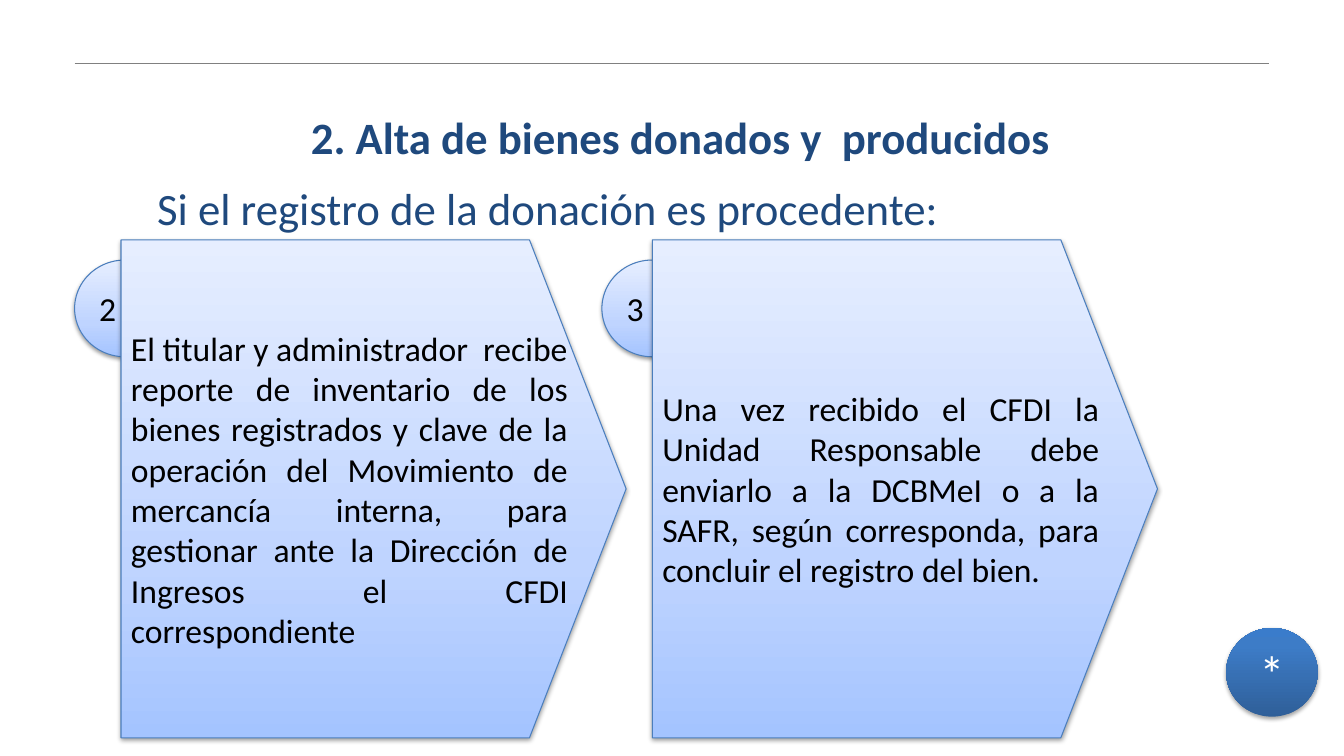
"""Builds the slide on registering donated and produced goods."""
from dataclasses import dataclass

from lxml import etree
from pptx import Presentation
from pptx.dml.color import RGBColor
from pptx.enum import shapes, text
from pptx.oxml import ns
from pptx.util import Inches, Pt

Stops = tuple[tuple[int, str], ...]
Box = tuple[float, float, float, float]


@dataclass(frozen=True)
class Theme:
    """Colours, font and type sizes of the slide."""
    font: str = "Calibri"
    heading: str = "1F497D"
    body: str = "000000"
    light: str = "FFFFFF"
    rule: str = "808080"
    outline: str = "4B7EBC"
    pale: Stops = ((0, "A4C4FF"), (35, "BFD4FF"), (100, "E6EEFF"))
    deep: Stops = ((0, "2F5F99"), (80, "3D7CC7"), (100, "3A7CCB"))
    heading_size: int = 32
    body_size: int = 24
    mark_size: int = 36
    thin: float = 0.75


@dataclass(frozen=True)
class Step:
    """A numbered stage of the procedure."""
    number: str
    wording: str
    circle_left: float
    arrow_left: float


THEME = Theme()
STEPS = (
    Step("2", "El titular y administrador  recibe reporte de inventario de los bienes "
         "registrados y clave de la operación del Movimiento de mercancía interna, para "
         "gestionar ante la Dirección de Ingresos el CFDI correspondiente", 0.74, 1.2),
    Step("3", "Una vez recibido el CFDI la Unidad Responsable debe enviarlo a la DCBMeI "
         "o a la SAFR, según corresponda, para concluir el registro del bien.", 5.97, 6.47),
)


def add_color(parent, value: str, alpha: int = 100) -> None:
    """Append an RGB colour, with opacity in percent, to an XML element."""
    color = etree.SubElement(parent, ns.qn("a:srgbClr"), val=value)
    if alpha < 100:
        etree.SubElement(color, ns.qn("a:alpha"), val=str(alpha * 1000))


def write(frame, wording: str, size: int, color: str, align, bold: bool = False) -> None:
    """Fill a text frame with one formatted paragraph."""
    frame.text = wording
    paragraph = frame.paragraphs[0]
    paragraph.alignment = align
    font = paragraph.runs[0].font
    font.name, font.size, font.bold = THEME.font, Pt(size), bold
    font.color.rgb = RGBColor.from_string(color)


def add_heading(slide, box: Box, wording: str, align, anchor, bold: bool, wrap: bool) -> None:
    """Add a line of heading text."""
    frame = slide.shapes.add_textbox(*map(Inches, box)).text_frame
    frame.word_wrap = wrap
    frame.vertical_anchor = anchor
    write(frame, wording, THEME.heading_size, THEME.heading, align, bold)


def add_panel(slide, preset, box: Box, stops: Stops, shade: int, wording: str,
              size: int, color: str, align):
    """Add a shape with an upward gradient, a soft shadow and text."""
    panel = slide.shapes.add_shape(preset, *map(Inches, box))
    panel.fill.gradient()
    panel.fill.gradient_angle = 90
    properties = panel.fill._xPr
    stop_list = properties.find(".//" + ns.qn("a:gsLst"))
    for stop in list(stop_list):
        stop_list.remove(stop)
    for position, value in stops:
        add_color(etree.SubElement(stop_list, ns.qn("a:gs"), pos=str(position * 1000)), value)
    panel.line.fill.background()
    panel.shadow.inherit = False
    shadow = etree.SubElement(
        properties.find(ns.qn("a:effectLst")), ns.qn("a:outerShdw"), blurRad=str(Pt(3.1)),
        dist=str(Pt(1.6)), dir="5400000", rotWithShape="0")
    add_color(shadow, THEME.body, shade)
    panel.text_frame.word_wrap = True
    panel.text_frame.vertical_anchor = text.MSO_ANCHOR.MIDDLE
    write(panel.text_frame, wording, size, color, align)
    return panel


def add_step(slide, step: Step) -> None:
    """Add a numbered circle and the arrow panel in front of it."""
    kinds = shapes.MSO_SHAPE
    aligns = text.PP_ALIGN
    circle = add_panel(slide, kinds.FLOWCHART_CONNECTOR, (step.circle_left, 2.58, 1, 0.96),
                       THEME.pale, 38, step.number, THEME.body_size, THEME.body, aligns.LEFT)
    arrow = add_panel(slide, kinds.PENTAGON, (step.arrow_left, 2.38, 5.01, 4.94),
                      THEME.pale, 38, step.wording, THEME.body_size, THEME.body, aligns.JUSTIFY)
    arrow.adjustments[0] = 0.194
    for panel in (circle, arrow):
        outline(panel.line, THEME.outline)


def outline(line, color: str) -> None:
    """Give a line its colour and thin width."""
    line.color.rgb = RGBColor.from_string(color)
    line.width = Pt(THEME.thin)


def add_rule(slide) -> None:
    """Add the thin line across the top."""
    rule = slide.shapes.add_connector(
        shapes.MSO_CONNECTOR.STRAIGHT, *map(Inches, (0.74, 0.63, 12.59, 0.63)))
    outline(rule.line, THEME.rule)
    etree.SubElement(rule._element.spPr, ns.qn("a:effectLst"))


def main() -> None:
    """Build and save the slide."""
    deck = Presentation()
    deck.slide_width, deck.slide_height = Inches(13.33), Inches(7.5)
    slide = deck.slides.add_slide(deck.slide_layouts[6])
    add_rule(slide)
    add_heading(slide, (0.74, 0.63, 12.02, 1.46), "2. Alta de bienes donados y  producidos",
                text.PP_ALIGN.CENTER, text.MSO_ANCHOR.MIDDLE, bold=True, wrap=True)
    add_heading(slide, (1.46, 1.74, 8.07, 0.64), "Si el registro de la donación es procedente:",
                text.PP_ALIGN.LEFT, text.MSO_ANCHOR.TOP, bold=False, wrap=False)
    for step in STEPS:
        add_step(slide, step)
    add_panel(slide, shapes.MSO_SHAPE.FLOWCHART_CONNECTOR, (12.16, 6.23, 0.91, 0.88),
              THEME.deep, 35, "*", THEME.mark_size, THEME.light, text.PP_ALIGN.CENTER)
    deck.save("out.pptx")


if __name__ == "__main__":
    main()
